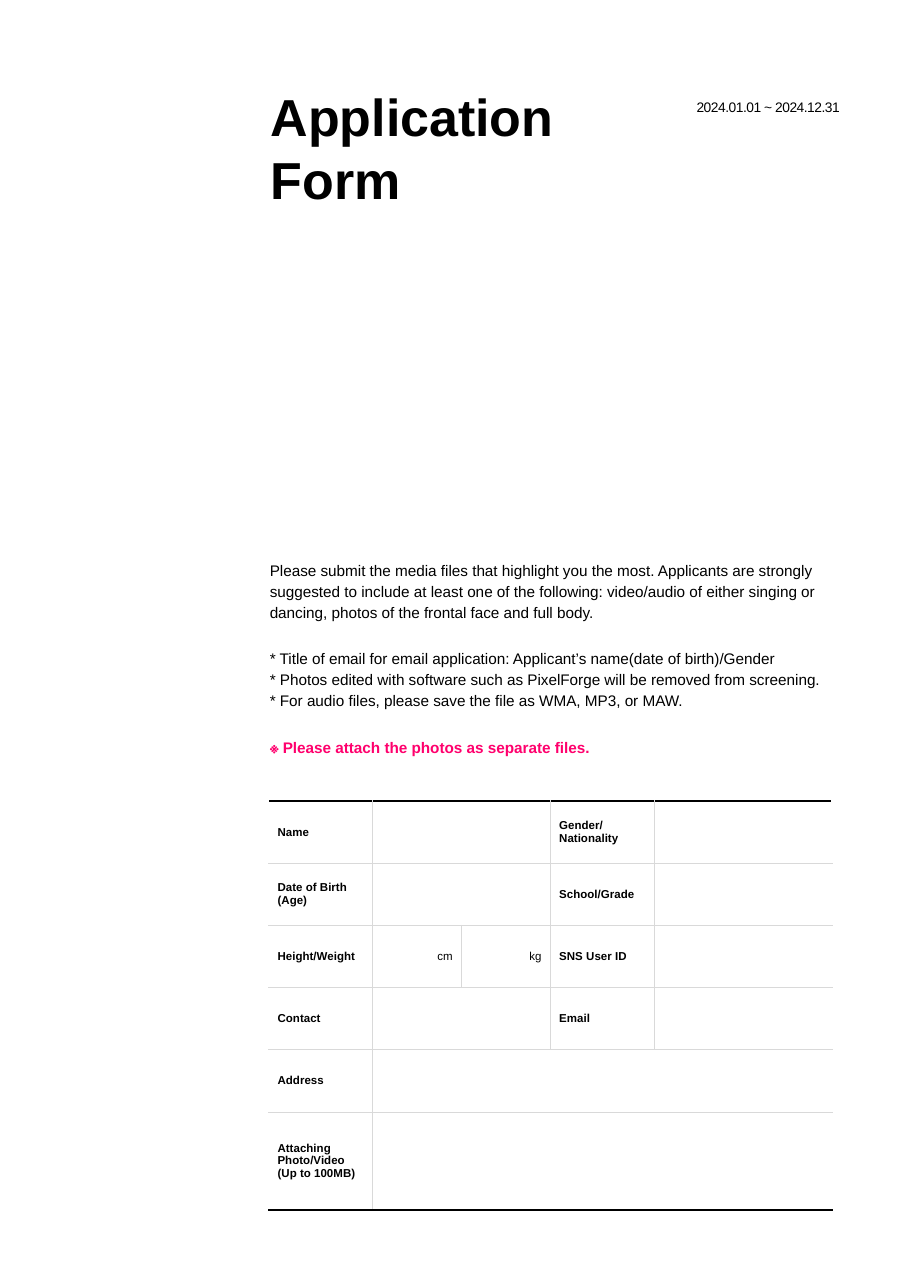
from lxml.etree import SubElement
from pptx import Presentation
from pptx.dml.color import RGBColor
from pptx.enum.text import MSO_ANCHOR as Anchor, MSO_AUTO_SIZE as AutoSize, PP_ALIGN as Align
from pptx.oxml.ns import qn
from pptx.util import Inches, Pt

WIDTH, HEIGHT = Inches(8.27), Inches(11.69)
COLORS = {"ink": "000000", "accent": "FF006D", "grid": "D9D9D9", "paper": "FFFFFF"}
FONT = "Arial"
TEXT_LEFT, TEXT_WIDTH = 28.42, 64.69
BODY = {"size": Pt(10)}
BODY_SPACING = {"line_spacing": 1.14}
LABEL = {"size": Pt(7.5), "bold": True}
UNIT = {"size": Pt(7.5), "bold": False}

TITLE = ["Application", "Form"]
PERIOD = ["2024.01.01 ~ 2024.12.31"]
INTRODUCTION = [
    "Please submit the media files that highlight you the most. Applicants are strongly "
    "suggested to include at least one of the following: video/audio of either singing or "
    "dancing, photos of the frontal face and full body."
]
RULES = [
    "* Title of email for email application: Applicant’s name(date of birth)/Gender",
    "* Photos edited with software such as PixelForge will be removed from screening.",
    "* For audio files, please save the file as WMA, MP3, or MAW.",
]
REMINDER = ["※ Please attach the photos as separate files."]

COLUMN_SHARES = [11.4, 9.76, 9.76, 11.4, 19.53]
ROW_SHARES = [4.83] * 5 + [7.6]
FIELDS = [
    ["Name", "", "", "Gender/ Nationality", ""],
    ["Date of Birth\v(Age)", "", "", "School/Grade", ""],
    ["Height/Weight", "cm", "kg", "SNS User ID", ""],
    ["Contact", "", "", "Email", ""],
    ["Address", "", "", "", ""],
    ["Attaching\vPhoto/Video\v(Up to 100MB)", "", "", "", ""],
]
SPAN_ENDS = {0: 2, 1: 2, 3: 2, 4: 4, 5: 4}


def across(share):
    return round(WIDTH * share / 100)


def down(share):
    return round(HEIGHT * share / 100)


def set_all(target, values):
    for name, value in values.items():
        setattr(target, name, value)


def format_paragraph(paragraph, font, layout, color="ink"):
    set_all(paragraph, layout)
    for run in paragraph.runs:
        set_all(run.font, {"name": FONT, **font})
        run.font.color.rgb = RGBColor.from_string(COLORS[color])


def add_text(slide, place, lines, font, layout={}, color="ink"):
    left, top, width, height = place
    shape = slide.shapes.add_textbox(across(left), down(top), across(width), down(height))
    frame = shape.text_frame
    set_all(frame, {"word_wrap": True, "auto_size": AutoSize.SHAPE_TO_FIT_TEXT})
    frame.text = "\n".join(lines)
    for paragraph in frame.paragraphs:
        format_paragraph(paragraph, font, layout, color)
    return shape


def tighten(shape, spacing):
    for paragraph in shape.text_frame.paragraphs:
        for run in paragraph.runs:
            run.font._element.set("spc", str(round(spacing * 100)))


def add_border(cell, side, color, points):
    line = SubElement(cell._tc.get_or_add_tcPr(), qn(f"a:ln{side}"), w=str(Pt(points)))
    fill = SubElement(line, qn("a:solidFill"))
    SubElement(fill, qn("a:srgbClr"), val=COLORS[color])


def border_cell(cell, row, column):
    last_row, last_column = len(ROW_SHARES) - 1, len(COLUMN_SHARES) - 1
    end = column + cell.span_width - 1 if cell.is_merge_origin else column
    edges = {
        "L": (column == 0, "paper"),
        "R": (end == last_column, "paper"),
        "T": (row == 0, "ink"),
        "B": (row == last_row, "ink"),
    }
    for side, (is_outer, color) in edges.items():
        add_border(cell, side, *((color, 1) if is_outer else ("grid", 0.75)))


def fill_cell(cell, text, column):
    set_all(cell, {
        "vertical_anchor": Anchor.MIDDLE,
        "margin_left": Inches(0.08),
        "margin_right": Inches(0 if column == 3 else 0.08),
    })
    cell.fill.background()
    if text:
        cell.text_frame.text = text
        is_unit = column in (1, 2)
        format_paragraph(
            cell.text_frame.paragraphs[0],
            UNIT if is_unit else LABEL,
            {"alignment": Align.RIGHT if is_unit else Align.LEFT},
        )


def add_form(slide, left, top):
    frame = slide.shapes.add_table(
        len(ROW_SHARES), len(COLUMN_SHARES), across(left), down(top),
        across(sum(COLUMN_SHARES)), down(sum(ROW_SHARES)),
    )
    table = frame.table
    set_all(table, {"first_row": False, "horz_banding": False})
    for column, share in zip(table.columns, COLUMN_SHARES):
        column.width = across(share)
    for row, share in zip(table.rows, ROW_SHARES):
        row.height = down(share)
    for row, end in SPAN_ENDS.items():
        table.cell(row, 1).merge(table.cell(row, end))
    for row, texts in enumerate(FIELDS):
        for column, text in enumerate(texts):
            cell = table.cell(row, column)
            border_cell(cell, row, column)
            fill_cell(cell, text, column)


def main():
    """Build the application form slide."""
    presentation = Presentation()
    set_all(presentation, {"slide_width": WIDTH, "slide_height": HEIGHT})
    slide = presentation.slides.add_slide(presentation.slide_layouts[6])
    add_text(slide, (28.54, 6.16, 33.62, 10.69), TITLE, {"size": Pt(34), "bold": True})
    period = add_text(slide, (66.51, 7.27, 26.84, 2.14), PERIOD, {"size": Pt(9)},
                      {"alignment": Align.RIGHT})
    tighten(period, -0.3)
    for top, height, lines in ((42.94, 5.65, INTRODUCTION), (49.79, 5.65, RULES)):
        add_text(slide, (TEXT_LEFT, top, TEXT_WIDTH, height), lines, BODY, BODY_SPACING)
    add_text(slide, (TEXT_LEFT, 56.72, TEXT_WIDTH, 2.4), REMINDER,
             {**BODY, "bold": True}, BODY_SPACING, "accent")
    add_form(slide, 29.5, 62.19)
    presentation.save("out.pptx")


if __name__ == "__main__":
    main()
